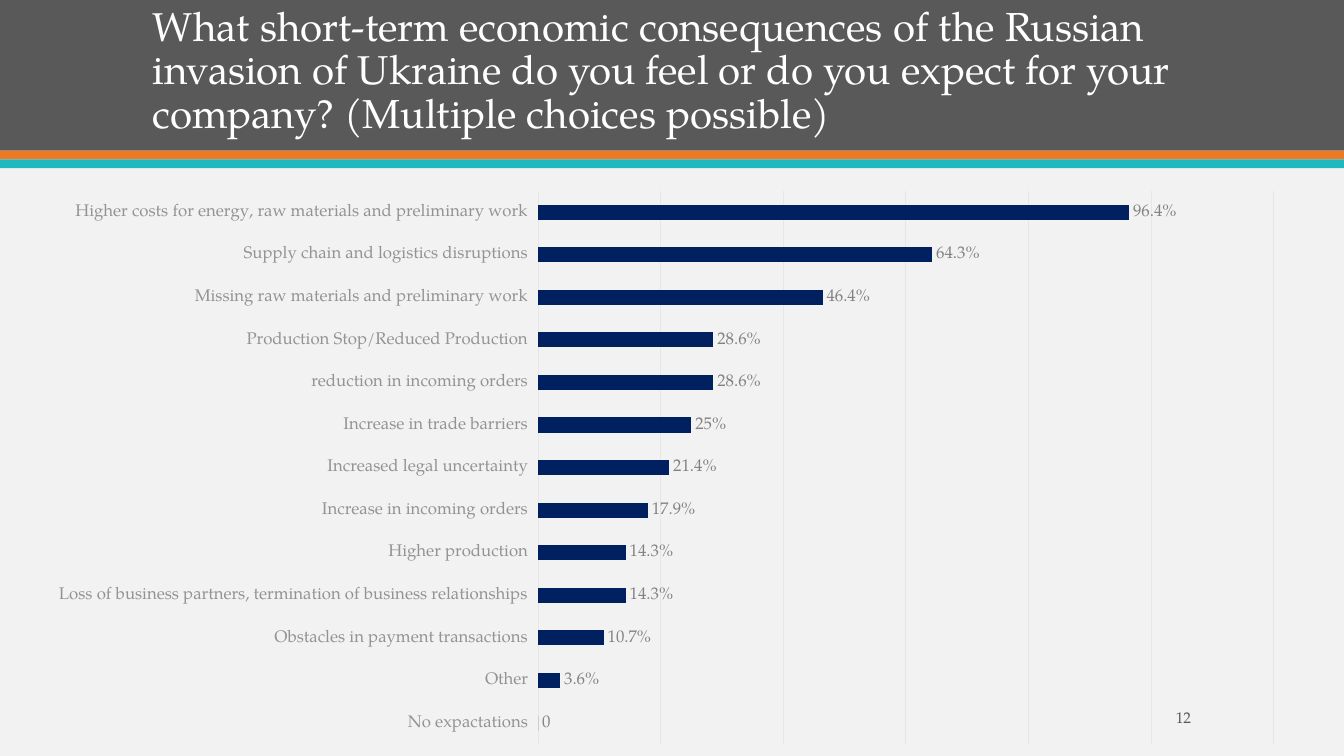
from pptx import Presentation
from pptx.chart.data import CategoryChartData
from pptx.dml.color import RGBColor
from pptx.enum.chart import XL_CHART_TYPE, XL_LABEL_POSITION, XL_TICK_LABEL_POSITION, XL_TICK_MARK
from pptx.enum.shapes import MSO_SHAPE
from pptx.enum.text import MSO_ANCHOR, MSO_AUTO_SIZE, PP_ALIGN
from pptx.oxml import parse_xml
from pptx.oxml.ns import nsdecls
from pptx.util import Cm, Pt

FONT = "TeX Gyre Pagella"
PAGE_WIDTH, PAGE_HEIGHT = Cm(33.87), Cm(19.05)
TITLE = ("What short-term economic consequences of the Russian invasion of Ukraine do you feel "
         "or do you expect for your company? (Multiple choices possible)")

# Answers from top to bottom, share of respondents in percent
ANSWERS = [
    ("Higher costs for energy, raw materials and preliminary work", 96.4),
    ("Supply chain and logistics disruptions", 64.3),
    ("Missing raw materials and preliminary work", 46.4),
    ("Production Stop/Reduced Production", 28.6),
    ("reduction in incoming orders", 28.6),
    ("Increase in trade barriers", 25),
    ("Increased legal uncertainty", 21.4),
    ("Increase in incoming orders", 17.9),
    ("Higher production", 14.3),
    ("Loss of business partners, termination of business relationships", 14.3),
    ("Obstacles in payment transactions", 10.7),
    ("Other", 3.6),
    ("No expactations", 0),
]


def color(value):
    return RGBColor.from_string(value)


def style_font(font, size, value):
    font.name = FONT
    font.size = Pt(size)
    font.color.rgb = color(value)


def style_line(line, value):
    line.width = Pt(0.75)
    line.color.rgb = color(value)


def add_header(page, left, top, width, height):
    # Dark band with two accent stripes below it
    stripe = Cm(0.22)
    bands = [(0, height, "595959"), (height, stripe, "EF7920"), (height + stripe, stripe, "1EB8C1")]
    for offset, band_height, fill in bands:
        band = page.shapes.add_shape(MSO_SHAPE.RECTANGLE, left, top + offset, width, band_height)
        band.shadow.inherit = False
        band.fill.solid()
        band.fill.fore_color.rgb = color(fill)
        band.line.fill.background()

    # Title, brought in front of the band
    title = page.shapes.title
    title.element.getparent().append(title.element)
    title.left, title.top = left + Cm(3.6), top + Cm(0.71)
    title.width, title.height = width - Cm(7.2), Cm(2.87)
    frame = title.text_frame
    frame.text = TITLE
    frame.word_wrap = True
    frame.auto_size = MSO_AUTO_SIZE.NONE
    frame.vertical_anchor = MSO_ANCHOR.BOTTOM
    para = frame.paragraphs[0]
    para.alignment = PP_ALIGN.LEFT
    para.line_spacing = 0.9
    style_font(para.font, 28.8, "FFFFFF")


def add_answer_chart(page, left, top, width, height):
    # Bar charts count from the bottom, so the answers are reversed
    data = CategoryChartData(number_format="General")
    data.categories = [answer for answer, share in reversed(ANSWERS)]
    data.add_series("Series 1", [share for answer, share in reversed(ANSWERS)])
    chart = page.shapes.add_chart(
        XL_CHART_TYPE.BAR_CLUSTERED, left, top, width, height, data).chart
    chart.has_legend = False
    chart.has_title = False
    style_font(chart.font, 10, "595959")

    # Axes and grid
    answers_axis = chart.category_axis
    answers_axis.major_tick_mark = XL_TICK_MARK.NONE
    answers_axis.tick_label_position = XL_TICK_LABEL_POSITION.LOW
    style_font(answers_axis.tick_labels.font, 12, "939393")
    style_line(answers_axis.format.line, "E6E6E6")
    share_axis = chart.value_axis
    share_axis.minimum_scale, share_axis.maximum_scale = 0, 120
    share_axis.major_unit = 20
    share_axis.has_major_gridlines = True
    style_line(share_axis.major_gridlines.format.line, "E6E6E6")
    share_axis.visible = False

    # Bars and their labels
    plot = chart.plots[0]
    plot.gap_width = 182
    plot.vary_by_categories = False
    bars = plot.series[0]
    bars.format.fill.solid()
    bars.format.fill.fore_color.rgb = color("002060")
    labels = bars.data_labels
    labels.show_value = True
    labels.number_format = 'General"%";General"%";0'
    labels.number_format_is_linked = False
    labels.position = XL_LABEL_POSITION.OUTSIDE_END
    style_font(labels.font, 12, "828282")

    # Fixed plot area leaves room for the long answers
    area = chart.element.chart.plotArea
    for layout in area.findall("{*}layout"):
        area.remove(layout)
    sizes = "".join(f'<c:{name} val="{value}"/>' for name, value in
                    [("x", 0.395), ("y", 0.02), ("w", 0.584), ("h", 0.96)])
    area.insert(0, parse_xml(
        f'<c:layout {nsdecls("c")}><c:manualLayout><c:layoutTarget val="inner"/>'
        f'<c:xMode val="edge"/><c:yMode val="edge"/>{sizes}</c:manualLayout></c:layout>'))


def add_page_number(page, left, top, width, height):
    box = page.shapes.add_textbox(left, top, width, height)
    frame = box.text_frame
    frame.word_wrap = True
    frame.vertical_anchor = MSO_ANCHOR.MIDDLE
    para = frame.paragraphs[0]
    para.text = "12"
    para.alignment = PP_ALIGN.RIGHT
    style_font(para.font, 11, "595959")


def main():
    deck = Presentation()
    deck.slide_width, deck.slide_height = PAGE_WIDTH, PAGE_HEIGHT
    page = deck.slides.add_slide(deck.slide_layouts[5])
    page.background.fill.solid()
    page.background.fill.fore_color.rgb = color("F2F2F2")
    add_header(page, 0, 0, PAGE_WIDTH, Cm(3.8))
    add_answer_chart(page, Cm(1.02), Cm(4.52), Cm(31.75), Cm(14.53))
    add_page_number(page, Cm(26.47), Cm(17.7), Cm(3.8), Cm(0.76))
    deck.save("out.pptx")


if __name__ == "__main__":
    main()
